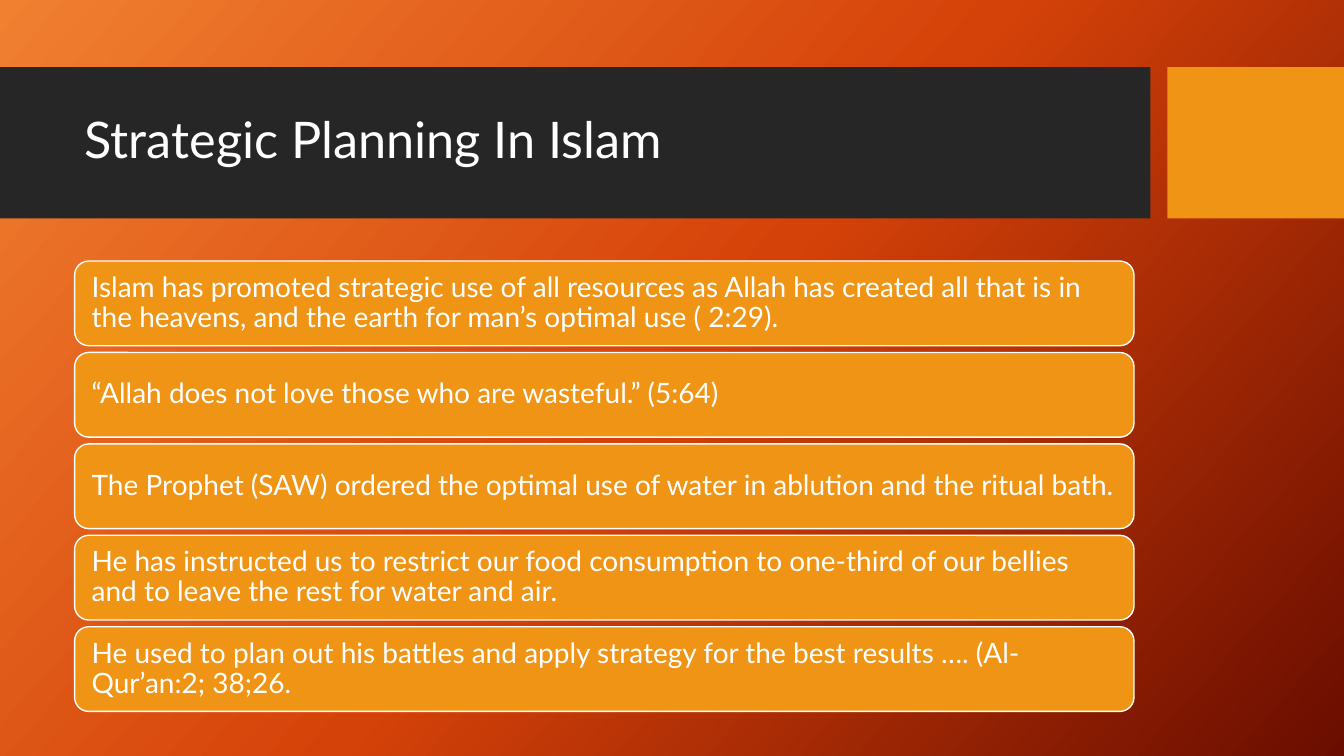
import copy

import pptx
import pptx.dml.color
import pptx.enum.shapes
import pptx.enum.text
import pptx.oxml.ns
import pptx.util

Pt = pptx.util.Pt
SHAPES = pptx.enum.shapes.MSO_SHAPE
DARK, ORANGE, WHITE = "262626", "F09415", "FFFFFF"
BACKGROUND_STOPS = [(0, "F18031"), (0.5, "D54209"), (1, "6A0D00")]
LEFT, WIDTH = 53.3, 756.7
CARD_TOP, CARD_HEIGHT, CARD_PITCH = 186.5, 60.5, 65.3
POINTS = [
    "Islam has promoted strategic use of all resources as Allah has created "
    "all that is in the heavens, and the earth for man’s optimal use ( 2:29).",
    "“Allah does not love those who are wasteful.” (5:64)",
    "The Prophet (SAW) ordered the optimal use of water in ablution and the ritual bath.",
    "He has instructed us to restrict our food consumption to one-third of our "
    "bellies and to leave the rest for water and air.",
    "He used to plan out his battles and apply strategy for the best results …. "
    "(Al-Qur’an:2; 38;26.",
]


def rgb(value):
    """Return the colour for a hex string."""
    return pptx.dml.color.RGBColor.from_string(value)


def set_attributes(target, values):
    """Set each named attribute of the target."""
    for name, value in values.items():
        setattr(target, name, value)


def paint_background(s, stops, angle):
    """Fill the slide background with a linear gradient."""
    fill = s.background.fill
    fill.gradient()
    fill.gradient_angle = angle
    stop_list = s.element.find(".//" + pptx.oxml.ns.qn("a:gsLst"))
    while len(stop_list) < len(stops):
        stop_list.append(copy.deepcopy(stop_list[-1]))
    for stop, (position, color) in zip(fill.gradient_stops, stops):
        stop.position = position
        stop.color.rgb = rgb(color)


def add_block(s, kind, box, color, line=None):
    """Add a filled shape, outlined when a line colour is given."""
    sp = s.shapes.add_shape(kind, *map(Pt, box))
    sp.shadow.inherit = False
    sp.fill.solid()
    sp.fill.fore_color.rgb = rgb(color)
    if line:
        sp.line.color.rgb = rgb(line)
        sp.line.width = Pt(1)
    else:
        sp.line.fill.background()
    return sp


def write_text(sp, text, size, margin):
    """Write one left-aligned white paragraph, centred vertically."""
    tf = sp.text_frame
    set_attributes(tf, {
        "word_wrap": True,
        "vertical_anchor": pptx.enum.text.MSO_ANCHOR.MIDDLE,
        "margin_left": Pt(margin),
        "margin_right": Pt(margin),
    })
    p = tf.paragraphs[0]
    set_attributes(p, {"alignment": pptx.enum.text.PP_ALIGN.LEFT, "line_spacing": 0.9})
    r = p.add_run()
    r.text = text
    set_attributes(r.font, {"name": "Lato", "size": Pt(size)})
    r.font.color.rgb = rgb(WHITE)


def main():
    """Build the slide and save it."""
    prs = pptx.Presentation()
    set_attributes(prs, {"slide_width": Pt(960), "slide_height": Pt(540)})
    s = prs.slides.add_slide(prs.slide_layouts[6])
    paint_background(s, BACKGROUND_STOPS, 318)
    add_block(s, SHAPES.RECTANGLE, (0, 48, 821.8, 108), DARK)
    add_block(s, SHAPES.RECTANGLE, (833.8, 48, 126.2, 108), ORANGE)
    title = s.shapes.add_textbox(*map(Pt, (LEFT, 59, WIDTH, 85)))
    write_text(title, "Strategic Planning In Islam", 36, 7.2)
    for i, text in enumerate(POINTS):
        box = (LEFT, CARD_TOP + i * CARD_PITCH, WIDTH, CARD_HEIGHT)
        card = add_block(s, SHAPES.ROUNDED_RECTANGLE, box, ORANGE, WHITE)
        write_text(card, text, 20, 9.2)
    prs.save("out.pptx")


if __name__ == "__main__":
    main()
